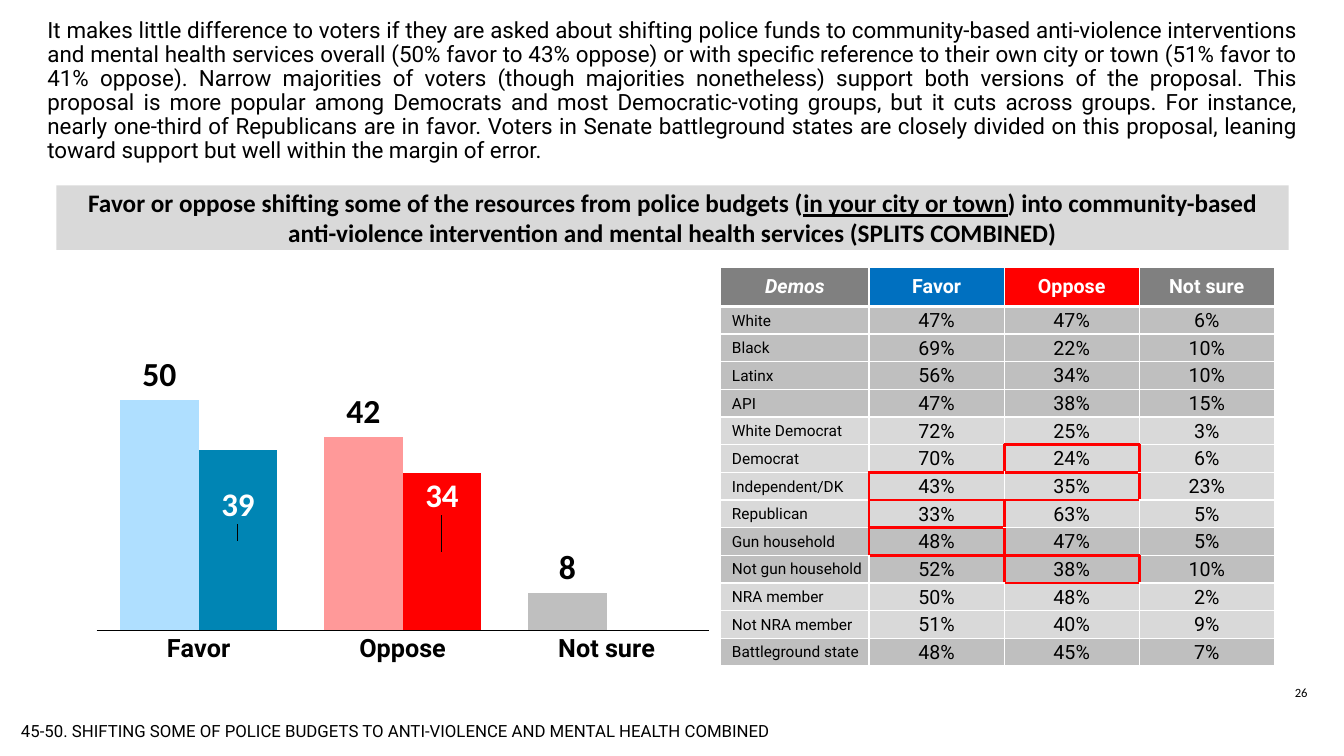
from copy import deepcopy
from dataclasses import dataclass

from pptx import Presentation
from pptx import util as u
from pptx.chart import data as chart_data
from pptx.dml.color import RGBColor
from pptx.enum import chart as charts, shapes, text
from pptx.oxml import parse_xml
from pptx.oxml.ns import nsdecls, qn


@dataclass(frozen=True)
class Theme:
    black: str = "000000"
    white: str = "FFFFFF"
    pale: str = "D9D9D9"
    silver: str = "BFBFBF"
    gray: str = "808080"
    blue: str = "0070C0"
    red: str = "FF0000"
    sky: str = "AFDFFF"
    teal: str = "0085B4"
    pink: str = "FF9999"
    heading: str = "Calibri"
    body: str = "Roboto"
    tiny: float = 9
    label: float = 11
    note: float = 12
    cell: float = 14
    chart: float = 15.1
    intro: float = 16
    question: float = 18
    inner_value: float = 23.5
    value: float = 24


class PollSlide:
    """Draws poll elements on a grid of tenth-inch columns and rows."""

    def __init__(self, deck, theme):
        self.theme = theme
        self.slide = deck.slides.add_slide(deck.slide_layouts[5])

    def grid(self, *steps):
        return [u.Inches(step / 10) for step in steps]

    def style(self, font, size, face, color=None, bold=False):
        font.size, font.name, font.bold = u.Pt(size), face, bold
        font.color.rgb = RGBColor.from_string(color or self.theme.black)

    def add_words(self, paragraph, words, size, face, color=None, bold=False):
        run = paragraph.add_run()
        run.text = words
        self.style(run.font, size, face, color, bold)
        return run

    def title(self, place, words):
        title = self.slide.shapes.title
        title.left, title.top, title.width, title.height = self.grid(*place)
        frame = title.text_frame
        frame.auto_size = text.MSO_AUTO_SIZE.NONE
        frame.vertical_anchor = text.MSO_ANCHOR.MIDDLE
        paragraph = frame.paragraphs[0]
        paragraph.alignment = text.PP_ALIGN.JUSTIFY
        paragraph.line_spacing = 0.9
        self.add_words(paragraph, words, self.theme.intro, self.theme.body)

    def caption(self, place, words, size, face, align=text.PP_ALIGN.LEFT):
        frame = self.slide.shapes.add_textbox(*self.grid(*place)).text_frame
        frame.word_wrap = True
        frame.paragraphs[0].alignment = align
        self.add_words(frame.paragraphs[0], words, size, face)

    def banner(self, place, parts):
        banner = self.slide.shapes.add_shape(shapes.MSO_SHAPE.RECTANGLE, *self.grid(*place))
        banner.shadow.inherit = False
        banner.fill.solid()
        banner.fill.fore_color.rgb = RGBColor.from_string(self.theme.pale)
        banner.line.fill.background()
        banner.text_frame.vertical_anchor = text.MSO_ANCHOR.MIDDLE
        paragraph = banner.text_frame.paragraphs[0]
        paragraph.alignment = text.PP_ALIGN.CENTER
        for words, underlined in parts:
            run = self.add_words(paragraph, words, self.theme.question, self.theme.heading, bold=True)
            run.font.underline = underlined

    def bars(self, place, answers, strengths, colors, label_shifts):
        t = self.theme
        source = chart_data.CategoryChartData()
        source.categories = answers
        for name, values in strengths:
            source.add_series(name, values)
        chart = self.slide.shapes.add_chart(
            charts.XL_CHART_TYPE.COLUMN_CLUSTERED, *self.grid(*place), source).chart
        chart.has_legend = chart.has_title = False
        self.style(chart.font, t.chart, t.heading)
        chart.plots[0].gap_width = 60
        chart.plots[0].vary_by_categories = False
        answer_axis, share_axis = chart.category_axis, chart.value_axis
        answer_axis.major_tick_mark = charts.XL_TICK_MARK.NONE
        answer_axis.format.line.color.rgb = RGBColor.from_string(t.black)
        answer_axis.format.line.width = u.Pt(0.25)
        self.style(answer_axis.tick_labels.font, t.question, t.body, bold=True)
        share_axis.minimum_scale, share_axis.maximum_scale = 0, 85
        share_axis.has_major_gridlines = share_axis.visible = False
        self.split_axes(chart)
        self.place_layout(chart._chartSpace.xpath(".//c:plotArea")[0], 0, 0.003, 0.033, 0.997, 0.771)

        for plot, fills in zip(chart.plots, colors):
            for index, color in enumerate(fills):
                fill = plot.series[0].points[index].format.fill
                fill.solid()
                fill.fore_color.rgb = RGBColor.from_string(color)
        overall, strong = (plot.series[0] for plot in chart.plots)
        overall.data_labels.show_value = True
        overall.data_labels.position = charts.XL_LABEL_POSITION.OUTSIDE_END
        self.style(overall.data_labels.font, t.value, t.heading, bold=True)
        for index, (across, down) in enumerate(label_shifts):
            label = strong.points[index].data_label
            self.style(label.font, t.inner_value, t.heading, t.white, True)
            label.position = charts.XL_LABEL_POSITION.CENTER
            self.place_layout(label._dLbl, 1, across, down)

    def split_axes(self, chart):
        area = chart._chartSpace.xpath(".//c:plotArea")[0]
        first = area.find(qn("c:barChart"))
        second = deepcopy(first)
        first.remove(first.findall(qn("c:ser"))[1])
        second.remove(second.find(qn("c:ser")))
        first.addnext(second)
        axes = [area.find(qn(tag)) for tag in ("c:catAx", "c:valAx")]
        right_axes = [deepcopy(axis) for axis in axes]
        for axis, reference, own, crossed in zip(
                right_axes, second.findall(qn("c:axId")), ("501", "502"), ("502", "501")):
            reference.set("val", own)
            axis.find(qn("c:axId")).set("val", own)
            axis.find(qn("c:crossAx")).set("val", crossed)
            axis.find(qn("c:delete")).set("val", "1")
        right_axes[1].xpath("./c:scaling/c:max")[0].set("val", "50")
        right_axes[1].find(qn("c:crosses")).set("val", "max")
        for axis in right_axes:
            axes[1].addnext(axis)

    def place_layout(self, parent, index, *sizes):
        for old in parent.findall(qn("c:layout")):
            parent.remove(old)
        modes = ""
        if len(sizes) == 4:
            modes = '<c:layoutTarget val="inner"/><c:xMode val="edge"/><c:yMode val="edge"/>'
        values = "".join(f'<c:{key} val="{size}"/>' for key, size in zip("xywh", sizes))
        parent.insert(index, parse_xml(
            f'<c:layout {nsdecls("c")}><c:manualLayout>{modes}{values}</c:manualLayout></c:layout>'))

    def edge(self, cell, side, color, width):
        cell._tc.get_or_add_tcPr().append(parse_xml(
            f'<a:ln{side} {nsdecls("a")} w="{u.Pt(width)}"><a:solidFill>'
            f'<a:srgbClr val="{color}"/></a:solidFill></a:ln{side}>'))

    def demographics(self, place, widths, heads, groups, dark_rows, boxes):
        t = self.theme
        table = self.slide.shapes.add_table(len(groups) + 1, len(heads), *self.grid(*place)).table
        table.first_row = table.horz_banding = False
        for column, width in zip(table.columns, self.grid(*widths)):
            column.width = width
        head_height = 3.9
        table.rows[0].height = self.grid(head_height)[0]
        for row in list(table.rows)[1:]:
            row.height = self.grid((place[3] - head_height) / len(groups))[0]
        rows = [[name for name, _ in heads]] + groups
        for r, entries in enumerate(rows):
            for c, entry in enumerate(entries):
                cell = table.cell(r, c)
                for side, down, across in (("L", 0, -1), ("R", 0, 1), ("T", -1, 0), ("B", 1, 0)):
                    marked = boxes.get((r, c)) != boxes.get((r + down, c + across))
                    plain = 3 if r == 0 and side == "B" else 1
                    self.edge(cell, side, *((t.red, 2.25) if marked else (t.white, plain)))
                cell.fill.solid()
                fill = heads[c][1] if r == 0 else t.silver if r in dark_rows else t.pale
                cell.fill.fore_color.rgb = RGBColor.from_string(fill)
                cell.vertical_anchor = text.MSO_ANCHOR.MIDDLE
                inset = u.Inches(0.01 if r else 0.02)
                cell.margin_left = cell.margin_right = cell.margin_top = inset
                cell.margin_bottom = 0 if r else inset
                paragraph = cell.text_frame.paragraphs[0]
                is_group = r > 0 and c == 0
                if is_group:
                    paragraph._p.get_or_add_pPr().set("marL", str(u.Inches(0.1)))
                else:
                    paragraph.alignment = text.PP_ALIGN.CENTER
                run = self.add_words(paragraph, entry if is_group or r == 0 else f"{entry}%",
                                     t.label if is_group else t.cell, t.body,
                                     t.black if r else t.white, r == 0)
                run.font.italic = r == c == 0


def main():
    deck = Presentation()
    deck.slide_width, deck.slide_height = u.Inches(13.33), u.Inches(7.5)
    t = Theme()
    poll = PollSlide(deck, t)
    poll.title((3.7, 1.8, 126, 14.5), "It makes little difference to voters if they are asked about shifting police funds to community-based anti-violence interventions and mental health services overall (50% favor to 43% oppose) or with specific reference to their own city or town (51% favor to 41% oppose). Narrow majorities of voters (though majorities nonetheless) support both versions of the proposal. This proposal is more popular among Democrats and most Democratic-voting groups, but it cuts across groups. For instance, nearly one-third of Republicans are in favor. Voters in Senate battleground states are closely divided on this proposal, leaning toward support but well within the margin of error.")
    poll.caption((125.3, 67.5, 7.5, 3.3), "26", t.tiny, t.heading, text.PP_ALIGN.CENTER)
    poll.bars((9.4, 22, 60.9, 50.4), ["Favor", "Oppose", "Not sure"],
              [("Series 1", (50, 42, 8)), ("Series 2", (39, 34, None))],
              [(t.sky, t.pink, t.silver), (t.teal, t.red)], [(0, -0.07), (0, -0.11)])
    poll.banner((5.6, 18.4, 122.2, 6.4), [
        ("Favor or oppose shifting some of the resources from police budgets (", False),
        ("in your city or town", True),
        (") into community-based anti-violence intervention and mental health services (SPLITS COMBINED)", False)])
    poll.caption((1.1, 71, 114.1, 3), "45-50. SHIFTING SOME OF POLICE BUDGETS TO ANTI-VIOLENCE AND MENTAL HEALTH COMBINED", t.note, t.body)
    groups = [
        ("White", 47, 47, 6), ("Black", 69, 22, 10), ("Latinx", 56, 34, 10), ("API", 47, 38, 15),
        ("White Democrat", 72, 25, 3), ("Democrat", 70, 24, 6), ("Independent/DK", 43, 35, 23),
        ("Republican", 33, 63, 5), ("Gun household", 48, 47, 5), ("Not gun household", 52, 38, 10),
        ("NRA member", 50, 48, 2), ("Not NRA member", 51, 40, 9), ("Battleground state", 48, 45, 7)]
    poll.demographics(
        (71.5, 26.5, 54.9, 39.6), (14.7, 13.4, 13.4, 13.4),
        [("Demos", t.gray), ("Favor", t.blue), ("Oppose", t.red), ("Not sure", t.gray)],
        groups, {1, 2, 3, 4, 9, 10, 13},
        {(6, 2): "Democrat", (7, 1): "Independent", (7, 2): "Independent",
         (8, 1): "Republican", (9, 1): "Gun", (10, 2): "No gun"})
    deck.save("out.pptx")


if __name__ == "__main__":
    main()
